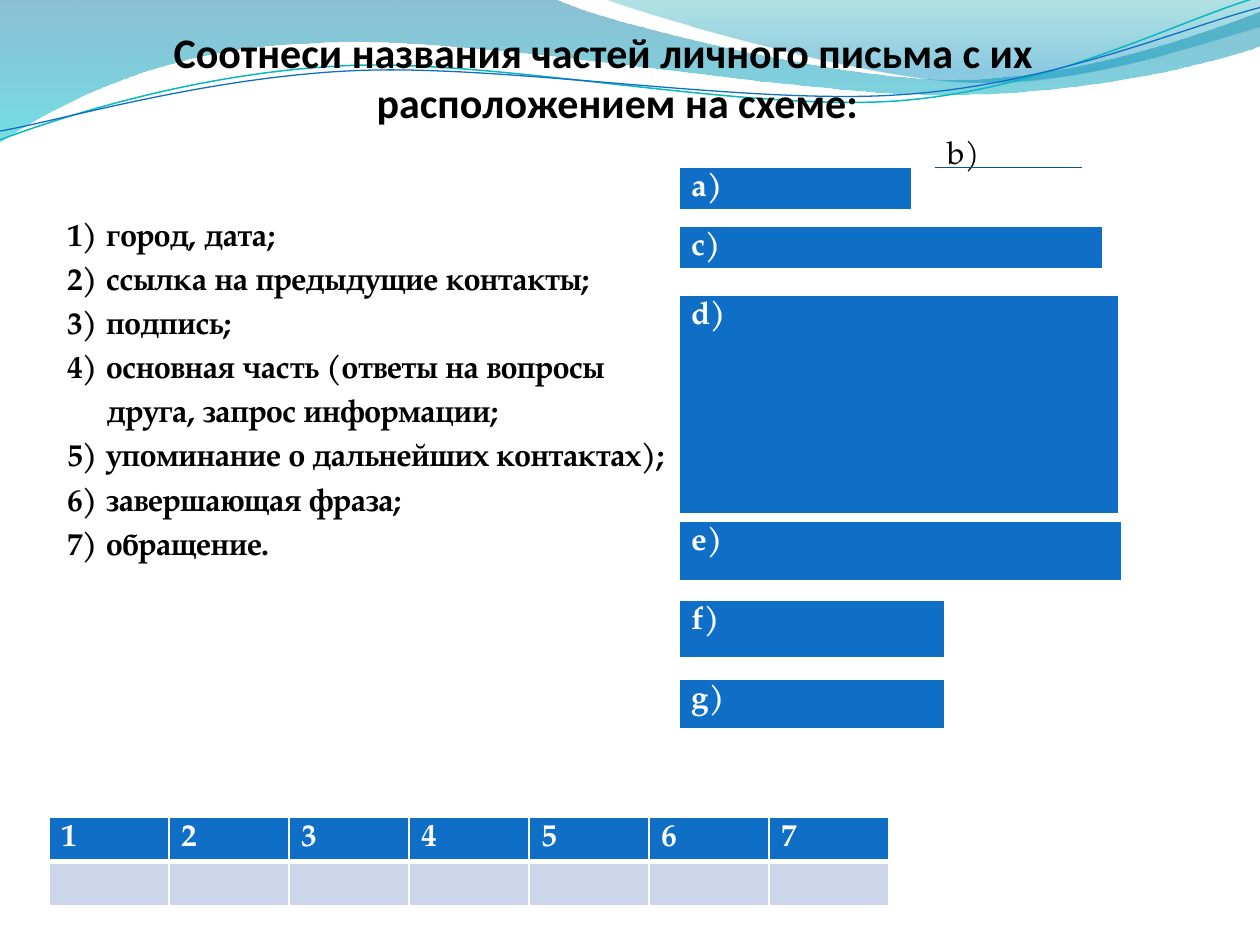
import math
from dataclasses import dataclass
from typing import Optional

from lxml import etree
from pptx import Presentation
from pptx import util as u
from pptx.dml.color import RGBColor
from pptx.enum import shapes, text
from pptx.oxml import ns

COLUMNS, ROWS = 100, 75
CELL = u.Inches(0.1)
SERIF = "TeX Gyre Pagella"
SANS = "Calibri"
COLORS = {
    "black": "000000", "white": "FFFFFF", "blue": "0F6FC6", "pale": "CCD5EA",
    "rule": "095295", "teal": "0AB8BF", "deep": "0074A1", "cyan": "00C6CF",
    "sea": "00A1A9", "sky": "008BBF",
}


@dataclass
class Stop:
    position: float
    color: str
    opacity: int


@dataclass
class Wave:
    start: tuple
    segments: list
    stops: Optional[list] = None
    line: Optional[str] = None
    weight: float = 0.75
    center: tuple = (0, 0)
    tilt: float = 0


@dataclass
class Line:
    words: str
    indent: float
    before: float = 3.6
    bold: bool = True
    size: int = 18
    font: str = SERIF
    hanging: float = 0
    align: text.PP_ALIGN = text.PP_ALIGN.LEFT


@dataclass
class Block:
    label: str
    top: float
    width: float
    height: float


WAVES = [
    Wave((0, 0),
         [(44, -0.1),
          (47.6, 1.7, 66.4, 6.3, 75.8, 6.3),
          (85.3, 6.3, 95.8, 2.6, 100, 0.9),
          (100.1, 3.6),
          (98.3, 4.4, 87, 7.6, 74.6, 7.5),
          (62.2, 7.5, 38.2, 2.8, 25.7, 3.4),
          (12.9, 3.6, 4.6, 8.3, -0.1, 11.3)],
         stops=[Stop(0, "deep", 45), Stop(1, "cyan", 55)]),
    Wave((47.9, -0.1),
         [(50.9, 1.1, 68.2, 6.2, 76.9, 6.5),
          (85.6, 6.9, 96.1, 3.2, 100, 2.1),
          (100, 0)],
         stops=[Stop(0, "sea", 30), Stop(0.8, "sky", 45)]),
    Wave((0, 11.1),
         [(4.8, 9.3, 15.8, 5.7, 27.7, 5.2),
          (39.5, 4.7, 59.3, 8.9, 71.3, 8),
          (83.3, 7.1, 93.8, 1.5, 99.8, -0.2)],
         line="teal", weight=0.85, center=(49.9, 5.75), tilt=-2.7),
    Wave((0, 10.4),
         [(4.7, 9.6, 16.4, 6.1, 28.3, 5.6),
          (40.3, 5.1, 59.7, 8.4, 71.7, 7.5),
          (83.6, 6.7, 94.1, 2.1, 100, 0.6)],
         line="blue", center=(49.95, 5.9), tilt=-2.7),
]

LINES = [
    Line(" Соотнеси названия частей личного письма с их расположением на схеме:",
         3, before=0, size=24, font=SANS, hanging=3, align=text.PP_ALIGN.CENTER),
    Line("b)", 74.25, bold=False),
    Line("1) город, дата;", 4.35, before=25),
    Line("2) ссылка на предыдущие контакты;", 4.35),
    Line("3) подпись;", 4.35),
    Line("4) основная часть (ответы на вопросы", 4.35),
    Line("друга, запрос информации;", 7.5),
    Line("5) упоминание о дальнейших контактах);", 4.35),
    Line("6) завершающая фраза;", 4.35),
    Line("7) обращение.", 4.35),
]

BLOCK_LEFT = 53.9
BLOCKS = [
    Block("a)", 13.3, 18.45, 3.5),
    Block("c)", 17.96, 33.6, 3.5),
    Block("d)", 23.43, 34.9, 17.5),
    Block("e)", 41.4, 35.15, 4.8),
    Block("f)", 47.65, 21.1, 4.7),
    Block("g)", 53.9, 21.1, 4.1),
]


def grid(count: float) -> int:
    return round(count * CELL)


def rgb(name: str) -> RGBColor:
    return RGBColor.from_string(COLORS[name])


def level(point: tuple, wave: Wave) -> tuple:
    angle = math.radians(-wave.tilt)
    dx, dy = point[0] - wave.center[0], point[1] - wave.center[1]
    return (grid(wave.center[0] + dx * math.cos(angle) - dy * math.sin(angle)),
            grid(wave.center[1] + dx * math.sin(angle) + dy * math.cos(angle)))


def bend(shape, segments: list) -> None:
    steps = iter(list(shape.element.iter(ns.qn("a:lnTo"))))
    for segment in segments:
        step = next(steps)
        if len(segment) == 6:
            curve = etree.Element(ns.qn("a:cubicBezTo"))
            step.addprevious(curve)
            for part in (step, next(steps), next(steps)):
                curve.append(part[0])
                part.getparent().remove(part)


def draw_wave(slide, wave: Wave) -> None:
    points = [wave.start] + [segment[i:i + 2] for segment in wave.segments
                             for i in range(0, len(segment), 2)]
    places = [level(point, wave) for point in points]
    builder = slide.shapes.build_freeform(*places[0])
    builder.add_line_segments(places[1:], close=wave.stops is not None)
    shape = builder.convert_to_shape()
    bend(shape, wave.segments)
    shape.rotation = wave.tilt
    shape.shadow.inherit = False
    if wave.stops is None:
        shape.fill.background()
        shape.line.color.rgb = rgb(wave.line)
        shape.line.width = u.Pt(wave.weight)
        return
    shape.line.fill.background()
    shape.fill.gradient()
    shape.fill.gradient_angle = 270
    for target, stop in zip(shape.fill.gradient_stops, wave.stops):
        target.position = stop.position
        target.color.rgb = rgb(stop.color)
    for color, stop in zip(shape.element.iter(ns.qn("a:srgbClr")), wave.stops):
        etree.SubElement(color, ns.qn("a:alpha"), val=str(stop.opacity * 1000))


def add_run(paragraph, words: str, size: int, font: str, color: str, bold: bool) -> None:
    run = paragraph.add_run()
    run.text = words
    run.font.size = u.Pt(size)
    run.font.name = font
    run.font.bold = bold
    run.font.color.rgb = rgb(color)


def draw_lines(slide, lines: list) -> None:
    frame = slide.shapes.add_textbox(0, grid(1.6), grid(95), grid(66)).text_frame
    frame.word_wrap = True
    for index, line in enumerate(lines):
        paragraph = frame.add_paragraph() if index else frame.paragraphs[0]
        paragraph.alignment = line.align
        paragraph.space_before = u.Pt(line.before)
        properties = paragraph._p.get_or_add_pPr()
        properties.set("marL", str(grid(line.indent)))
        properties.set("indent", str(-grid(line.hanging)))
        add_run(paragraph, line.words, line.size, line.font, "black", line.bold)


def style_cell(cell, words: str, fill: str, bottom: float) -> None:
    cell.margin_bottom = 0
    properties = cell._tc.get_or_add_tcPr()
    for side, weight in zip("LRTB", (1, 1, 1, bottom)):
        border = etree.SubElement(properties, ns.qn(f"a:ln{side}"), w=str(u.Pt(weight)))
        solid = etree.SubElement(border, ns.qn("a:solidFill"))
        etree.SubElement(solid, ns.qn("a:srgbClr"), val=COLORS["white"])
    cell.fill.solid()
    cell.fill.fore_color.rgb = rgb(fill)
    if words:
        add_run(cell.text_frame.paragraphs[0], words, 18, SERIF, "white", True)


def draw_table(slide, heads: list, left: float, top: float, width: float,
               height: float, rows: int = 1) -> None:
    table = slide.shapes.add_table(rows, len(heads), grid(left), grid(top),
                                   grid(width), grid(height)).table
    for column, head in enumerate(heads):
        style_cell(table.cell(0, column), head, "blue", 3)
        for row in range(1, rows):
            style_cell(table.cell(row, column), "", "pale", 1)


def draw_rule(slide, left: float, right: float, top: float) -> None:
    rule = slide.shapes.add_connector(shapes.MSO_CONNECTOR.STRAIGHT, grid(left),
                                      grid(top), grid(right), grid(top))
    rule.line.color.rgb = rgb("rule")
    rule.line.width = u.Pt(0.75)
    etree.SubElement(rule.element.spPr, ns.qn("a:effectLst"))


def main() -> None:
    presentation = Presentation()
    presentation.slide_width, presentation.slide_height = grid(COLUMNS), grid(ROWS)
    slide = presentation.slides.add_slide(presentation.slide_layouts[6])
    for wave in WAVES:
        draw_wave(slide, wave)
    draw_lines(slide, LINES)
    for block in BLOCKS:
        draw_table(slide, [block.label], BLOCK_LEFT, block.top, block.width, block.height)
    draw_rule(slide, 74.2, 85.9, 13.3)
    draw_table(slide, [str(n) for n in range(1, 8)], 3.9, 64.85, 66.65, 7, rows=2)
    presentation.save("out.pptx")


if __name__ == "__main__":
    main()
